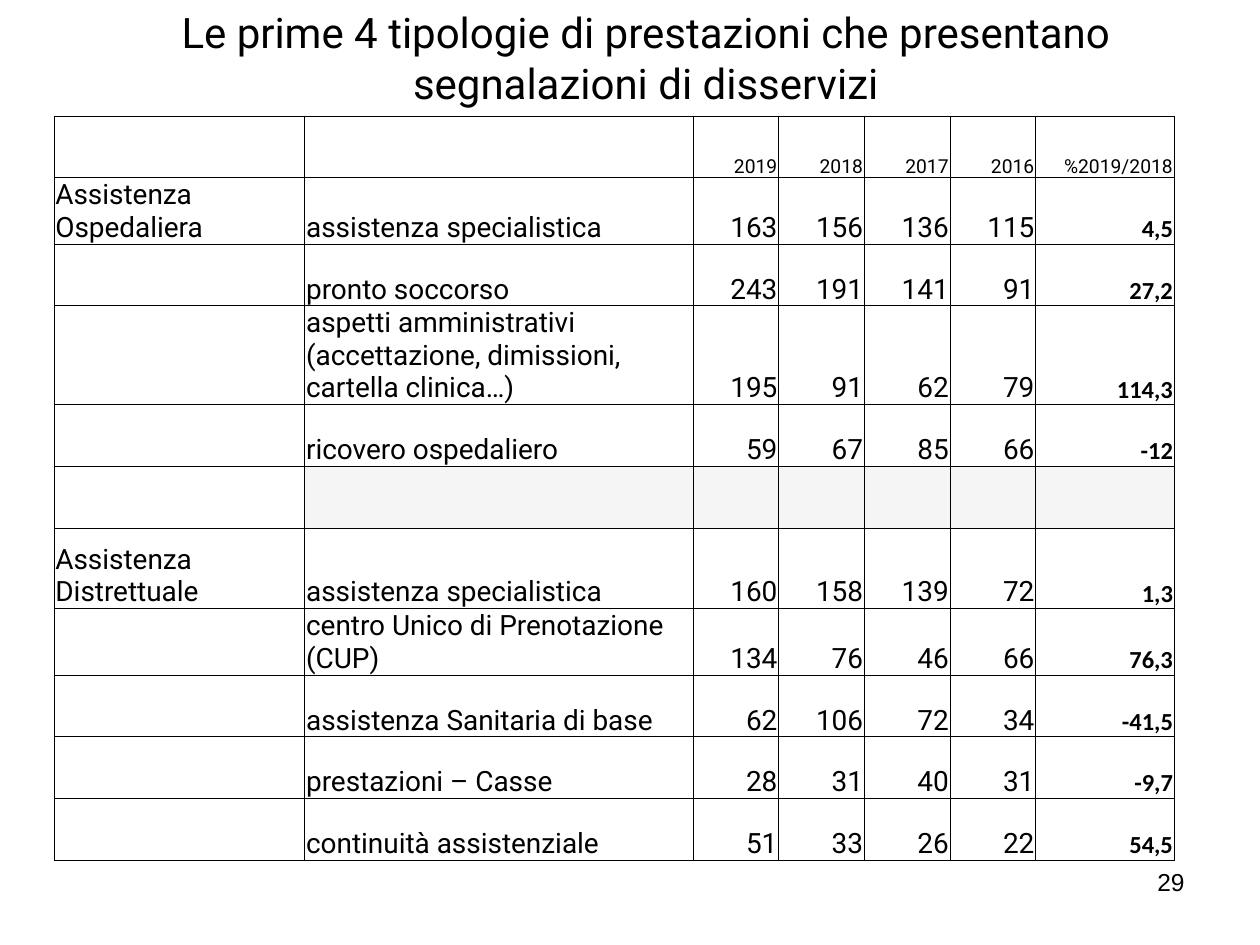
"""Build a slide with a table of the services that receive the most complaints."""
import pptx
import pptx.dml.color
import pptx.enum.text
import pptx.oxml
import pptx.oxml.ns
import pptx.util

Inches = pptx.util.Inches
Pt = pptx.util.Pt
ANCHOR = pptx.enum.text.MSO_ANCHOR
ALIGN = pptx.enum.text.PP_ALIGN


def paint(item, code):
    item.rgb = pptx.dml.color.RGBColor.from_string(code)


def write(para, text, size, face="Roboto", bold=False):
    run = para.add_run()
    run.text = text
    run.font.size = Pt(size)
    run.font.name = face
    run.font.bold = bold
    paint(run.font.color, "000000")


deck = pptx.Presentation()
deck.slide_width, deck.slide_height = Inches(10), Inches(7.5)
slide = deck.slides.add_slide(deck.slide_layouts[5])

title = slide.shapes.title
title.left, title.top = Inches(0.59), Inches(0.52)
title.width, title.height = Inches(9.07), Inches(0.6)
title.text_frame.vertical_anchor = ANCHOR.MIDDLE
head = title.text_frame.paragraphs[0]
head.alignment = ALIGN.CENTER
write(head, "Le prime 4 tipologie di prestazioni che presentano segnalazioni di disservizi", 24)
head.add_line_break()

rows = [
    ["", "", "2019", "2018", "2017", "2016", "%2019/2018"],
    ["Assistenza Ospedaliera", "assistenza specialistica", "163", "156", "136", "115", "4,5"],
    ["", "pronto soccorso", "243", "191", "141", "91", "27,2"],
    ["", "aspetti amministrativi (accettazione, dimissioni, cartella clinica…)",
     "195", "91", "62", "79", "114,3"],
    ["", "ricovero ospedaliero", "59", "67", "85", "66", "-12"],
    [""] * 7,
    ["Assistenza Distrettuale", "assistenza specialistica", "160", "158", "139", "72", "1,3"],
    ["", "centro Unico di Prenotazione (CUP)", "134", "76", "46", "66", "76,3"],
    ["", "assistenza Sanitaria di base", "62", "106", "72", "34", "-41,5"],
    ["", "prestazioni – Casse", "28", "31", "40", "31", "-9,7"],
    ["", "continuità assistenziale", "51", "33", "26", "22", "54,5"],
]
widths = [1.99, 3.08] + [0.68] * 4 + [1.1]
tall = {3, 6}
gap = 5

frame = slide.shapes.add_table(
    len(rows), len(widths), Inches(0.43), Inches(0.92), Inches(8.9), Inches(5.94))
table = frame.table
table.first_row = table.horz_banding = False
for col, width in zip(table.columns, widths):
    col.width = Inches(width)

for r, row in enumerate(rows):
    table.rows[r].height = Inches(0.64 if r in tall else 0.49)
    for c, text in enumerate(row):
        cell = table.cell(r, c)
        cell.vertical_anchor = ANCHOR.BOTTOM
        cell.margin_left = cell.margin_right = cell.margin_top = Inches(0.01)
        cell.margin_bottom = 0
        for side in ("lnL", "lnR", "lnT", "lnB"):
            cell._tc.get_or_add_tcPr().append(pptx.oxml.parse_xml(
                f'<a:{side} {pptx.oxml.ns.nsdecls("a")} w="{Pt(0.5)}"><a:solidFill>'
                f'<a:srgbClr val="000000"/></a:solidFill></a:{side}>'))
        cell.fill.solid()
        paint(cell.fill.fore_color, "F5F5F5" if r == gap and c else "FFFFFF")
        if text:
            para = cell.text_frame.paragraphs[0]
            para.alignment = ALIGN.RIGHT if c > 1 else ALIGN.LEFT
            if r == 0:
                write(para, text, 11)
            elif c == len(widths) - 1:
                write(para, text, 14, "Calibri", True)
            else:
                write(para, text, 16)

page = slide.shapes.add_textbox(Inches(7.17), Inches(6.83), Inches(2.33), Inches(0.52))
page.text_frame.word_wrap = True
foot = page.text_frame.paragraphs[0]
foot.alignment = ALIGN.RIGHT
write(foot, "29", 14, "Arial")

deck.save("out.pptx")
